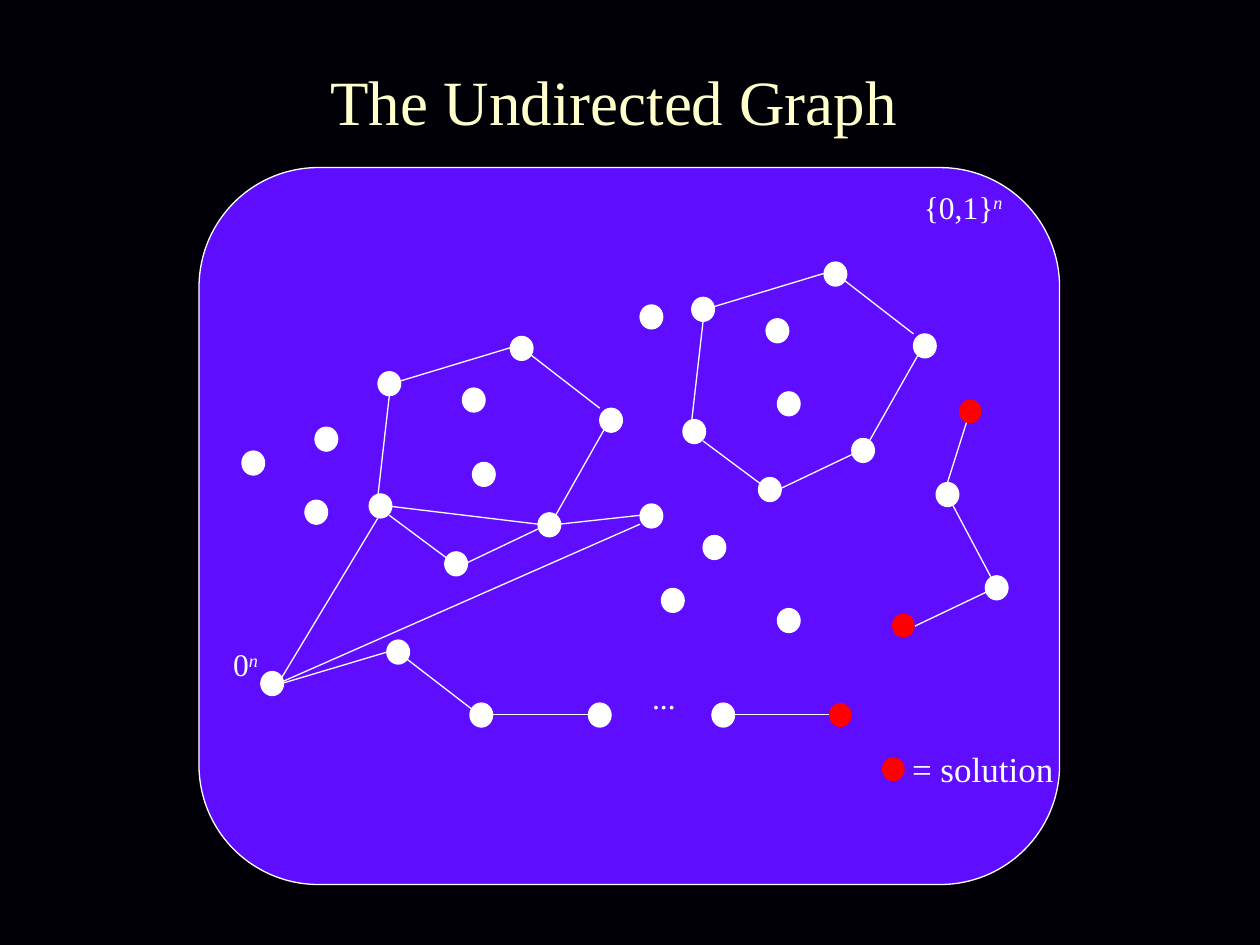
from pptx import Presentation, util as u
from pptx.dml.color import RGBColor
from pptx.enum import shapes, text
from pptx.oxml.ns import qn
from lxml import etree

# The slide is a grid of 100 columns by 75 rows
COLS, ROWS = 100, 75
CELL = u.Inches(0.1)
DOT_W, DOT_H = 1.8, 1.9
WHITE, RED, VIOLET = "FFFFFF", "FF0000", "5E0DFF"
NIGHT, CREAM = "010006", "FFFFCC"
FONT = "Times New Roman"

# Both hexagons share one shape, placed from its top left corner
HEXAGON_ORIGINS = [(29.3, 26.7), (54.2, 20.8)]
HEXAGON_NODES = [(0.7, 2.8), (11.2, 0), (18.3, 5.7),
                 (13.4, 14), (6, 17.1), (0, 12.5)]
HEXAGON_EDGES = [(1.6, 3.8, 11.2, 0.9), (12.1, 0.9, 18.3, 5.7),
                 (19.1, 6.6, 14.8, 14.2), (14, 15, 7.7, 18),
                 (6.7, 18, 1.6, 14.2), (0.7, 12.6, 1.6, 4.7)]

CHAIN_ROW = 55.8
NODES = [
    (20.7, 53.3), (30.7, 50.8),                                # from 0^n
    (37.3, CHAIN_ROW), (46.7, CHAIN_ROW), (56.5, CHAIN_ROW),   # bottom chain
    (74.3, 38.3), (78.2, 45.7),                                # right chain
    (50.8, 40), (50.8, 24.2), (19.2, 35.8), (25, 33.9), (24.2, 39.7),
    (36.7, 30.8), (37.5, 36.7), (60.8, 25.3), (61.7, 31.1),
    (55.8, 42.5), (52.5, 46.7), (61.7, 48.3),
]
SOLUTIONS = [(70.8, 48.7), (76.1, 31.7), (65.8, CHAIN_ROW), (70, 60.1)]
EDGES = [
    (21.5, 54.5, 30.9, 51.7), (31.5, 51.7, 37.6, 56.4),        # bottom chain
    (38.2, 56.7, 47.1, 56.7), (57.3, 56.7, 66.3, 56.7),
    (77, 32.6, 75.2, 38.3), (75.2, 39.3, 78.7, 45.9),          # right chain
    (78.9, 46.7, 72.6, 49.7),
    (21.5, 55.2, 30, 41.1), (21.5, 54.5, 50.8, 41.6),          # from 0^n
    (31.1, 40.2, 42.7, 41.6), (44.4, 41.6, 50.8, 40.9),
]


def color(code):
    return RGBColor.from_string(code)


def cells(*counts):
    return [round(n * CELL) for n in counts]


def add_shape(s, kind, x, y, w, h, fill, line=None):
    sp = s.shapes.add_shape(kind, *cells(x, y, w, h))
    sp.shadow.inherit = False
    sp.fill.solid()
    sp.fill.fore_color.rgb = color(fill)
    if line:
        sp.line.color.rgb = color(line)
        sp.line.width = u.Pt(0.75)
    else:
        sp.line.fill.background()


def add_dot(s, x, y, fill=WHITE, line=WHITE):
    add_shape(s, shapes.MSO_SHAPE.OVAL, x, y, DOT_W, DOT_H, fill, line)


def add_edge(s, x1, y1, x2, y2):
    edge = s.shapes.add_connector(shapes.MSO_CONNECTOR.STRAIGHT,
                                  *cells(x1, y1, x2, y2))
    edge.line.color.rgb = color(WHITE)
    edge.line.width = u.Pt(0.75)
    etree.SubElement(edge._element.spPr, qn("a:effectLst"))


def add_text(s, words, x, y, w, h, size=18, fill=WHITE, italic=False, power="",
             align=text.PP_ALIGN.CENTER, anchor=text.MSO_ANCHOR.TOP, wrap=True):
    tf = s.shapes.add_textbox(*cells(x, y, w, h)).text_frame
    tf.word_wrap = wrap
    tf.vertical_anchor = anchor
    p = tf.paragraphs[0]
    p.alignment = align
    for part, slanted, raised in [(words, italic, False), (power, True, True)]:
        if not part:
            continue
        r = p.add_run()
        r.text = part
        r.font.name, r.font.size = FONT, u.Pt(size)
        r.font.italic = slanted
        r.font.color.rgb = color(fill)
        if raised:
            r.font._element.set("baseline", "30000")


def add_hexagon(s, left, top):
    for x1, y1, x2, y2 in HEXAGON_EDGES:
        add_edge(s, left + x1, top + y1, left + x2, top + y2)
    for x, y in HEXAGON_NODES:
        add_dot(s, left + x, top + y)


def main():
    prs = Presentation()
    prs.slide_width, prs.slide_height = cells(COLS, ROWS)
    s = prs.slides.add_slide(prs.slide_layouts[6])
    s.background.fill.solid()
    s.background.fill.fore_color.rgb = color(NIGHT)

    # Title and the space of all strings
    add_text(s, "The Undirected Graph", 0.8, 1.7, 95.8, 12.5, size=36,
             fill=CREAM, anchor=text.MSO_ANCHOR.MIDDLE)
    add_shape(s, shapes.MSO_SHAPE.ROUNDED_RECTANGLE, 15.8, 13.3, 68.3, 56.9,
              VIOLET, WHITE)

    # Graph: edges lie under the nodes
    for edge in EDGES:
        add_edge(s, *edge)
    for origin in HEXAGON_ORIGINS:
        add_hexagon(s, *origin)
    for node in NODES:
        add_dot(s, *node)
    for node in SOLUTIONS:
        add_dot(s, *node, fill=RED, line=None)

    # Labels and legend
    add_text(s, "{0,1}", 64.6, 14.4, 23.7, 4, power="n")
    add_text(s, "0", 16.7, 50.7, 5.6, 4, power="n")
    add_text(s, "...", 47.5, 53.3, 10.5, 4, italic=True)
    add_text(s, "= solution", 71.4, 58.8, 13.3, 4.4, size=20,
             align=text.PP_ALIGN.LEFT, wrap=False)

    prs.save("out.pptx")


if __name__ == "__main__":
    main()
